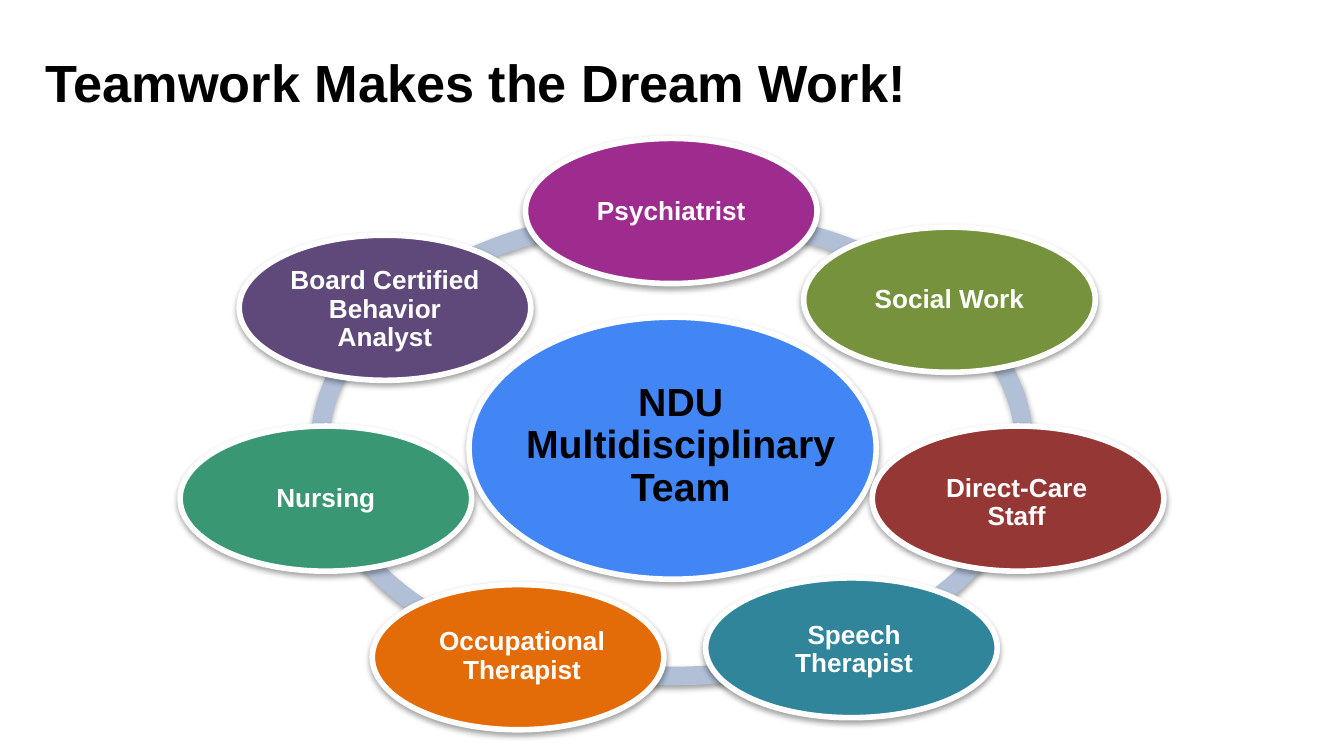
from dataclasses import dataclass
from typing import Any

from lxml import etree
from pptx import Presentation
from pptx.dml.color import RGBColor
from pptx.enum import shapes, text
from pptx.oxml import ns
from pptx.util import Inches, Pt


@dataclass(frozen=True)
class Theme:
    font: str = "Arial"
    dark: str = "000000"
    light: str = "FFFFFF"
    ring: str = "B1C0D7"
    hub: str = "4285F4"
    head: int = 28
    mid: int = 21
    small: int = 14


@dataclass(frozen=True)
class Box:
    left: float
    top: float
    width: float
    height: float

    def place(self) -> tuple:
        return tuple(Inches(n) for n in (self.left, self.top, self.width, self.height))


@dataclass(frozen=True)
class Role:
    label: str
    fill: str
    left: float
    top: float
    dx: float = 0.32
    dy: float = 0.16
    width: float = 1.53
    height: float = 1.08
    turn: int = 0


THEME = Theme()
WIDE = 10
ROLES = (
    Role("Psychiatrist", "9E2C8E", 3.91, 1.03),
    Role("Social Work", "76923C", 5.98, 1.69),
    Role("Board Certified Behavior Analyst", "5F497A", 1.78, 1.75, dy=0.17),
    Role("Speech Therapist", "31859B", 5.25, 4.3, dx=0.34, dy=0.15, height=1.04, turn=180),
    Role("Occupational Therapist", "E36C09", 2.77, 4.35, dx=0.26, dy=0.15, width=1.71),
    Role("Nursing", "399773", 1.34, 3.17),
    Role("Direct-Care Staff", "953734", 6.49, 3.17, dx=0.31, dy=0.19),
)
RING = Box(2.31, 1.54, 5.38, 3.56)
STEP = 216 / 7
STOPS = [162 - STEP * n for n in range(1, 6)] + [162 + STEP, 162]


def shade(shape: Any) -> None:
    props = shape._element.spPr
    effect = etree.SubElement(props, ns.qn("a:effectLst"))
    drop = etree.SubElement(effect, ns.qn("a:outerShdw"), blurRad="40000",
                            dist="20000", dir="5400000", rotWithShape="0")
    tint = etree.SubElement(drop, ns.qn("a:srgbClr"), val=THEME.dark)
    etree.SubElement(tint, ns.qn("a:alpha"), val="37000")


def paint(shape: Any, fill: str) -> None:
    shape.fill.solid()
    shape.fill.fore_color.rgb = RGBColor.from_string(fill)


def style(frame: Any, size: int, ink: str, align: Any) -> None:
    frame.word_wrap = True
    frame.vertical_anchor = text.MSO_ANCHOR.MIDDLE
    for line in frame.paragraphs:
        line.alignment = align
        line.line_spacing = 0.9
        for run in line.runs:
            run.font.name = THEME.font
            run.font.size = Pt(size)
            run.font.bold = True
            run.font.color.rgb = RGBColor.from_string(ink)


def draw_arc(group: Any, start: float, end: float) -> None:
    arc = group.shapes.add_shape(shapes.MSO_SHAPE.BLOCK_ARC, *RING.place())
    arc.adjustments[0] = start * 0.6
    arc.adjustments[1] = end * 0.6
    arc.adjustments[2] = 0.039
    paint(arc, THEME.ring)
    arc.line.fill.background()
    shade(arc)


def draw_oval(group: Any, box: Box, fill: str, turn: int = 0) -> None:
    oval = group.shapes.add_shape(shapes.MSO_SHAPE.OVAL, *box.place())
    oval.rotation = turn
    paint(oval, fill)
    oval.line.color.rgb = RGBColor.from_string(THEME.light)
    oval.line.width = Pt(3)
    shade(oval)


def draw_label(group: Any, box: Box, words: str, size: int, ink: str) -> None:
    frame = group.shapes.add_textbox(*box.place()).text_frame
    frame.margin_left = frame.margin_right = Inches(0.01)
    frame.margin_top = frame.margin_bottom = Inches(0.01)
    frame.text = words
    style(frame, size, ink, text.PP_ALIGN.CENTER)


def draw_role(group: Any, role: Role) -> None:
    draw_oval(group, Box(role.left, role.top, 2.17, role.height), role.fill, role.turn)
    spot = Box(role.left + role.dx, role.top + role.dy, role.width, 0.77)
    draw_label(group, spot, role.label, THEME.small, THEME.light)


def draw_title(slide: Any, words: str) -> None:
    title = slide.shapes.title
    title.left, title.top, title.width, title.height = Box(0.27, 0.09, 8.62, 1.09).place()
    frame = title.text_frame
    frame.margin_left = frame.margin_right = Inches(0.07)
    frame.margin_top = frame.margin_bottom = Inches(0.04)
    frame.text = words
    frame.auto_size = text.MSO_AUTO_SIZE.NONE
    style(frame, THEME.head, THEME.dark, text.PP_ALIGN.LEFT)


def main() -> None:
    deck = Presentation()
    deck.slide_width, deck.slide_height = Inches(WIDE), Inches(WIDE * 9 / 16)
    slide = deck.slides.add_slide(deck.slide_layouts[5])
    draw_title(slide, "Teamwork Makes the Dream Work!")
    group = slide.shapes.add_group_shape()
    for n, start in enumerate(STOPS):
        draw_arc(group, start, STOPS[n - 1])
    draw_oval(group, Box(3.49, 2.36, 3.03, 1.95), THEME.hub)
    draw_label(group, Box(3.83, 2.66, 2.47, 1.32), "NDU\nMultidisciplinary Team",
               THEME.mid, THEME.dark)
    for role in ROLES:
        draw_role(group, role)
    deck.save("out.pptx")


if __name__ == "__main__":
    main()
